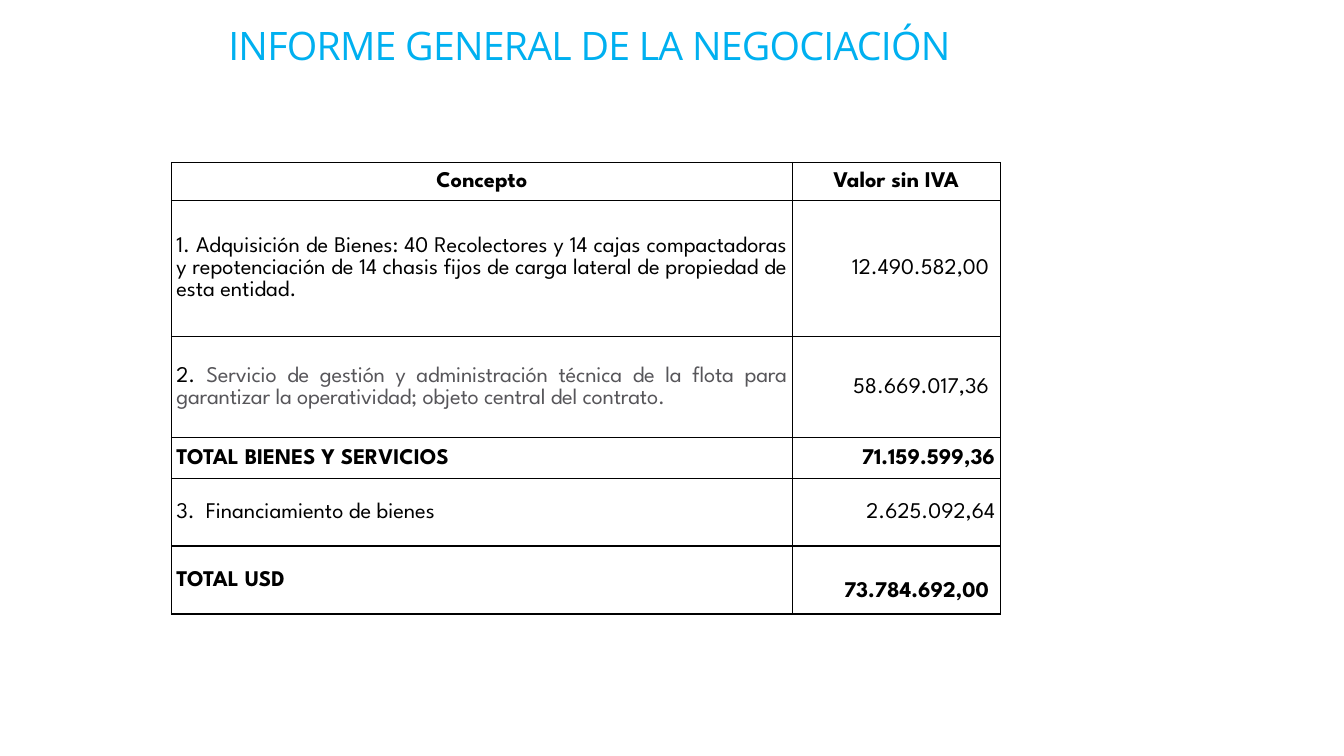
from lxml import etree
from pptx import Presentation
from pptx.dml.color import RGBColor
from pptx.enum.text import MSO_ANCHOR as Anchor, MSO_AUTO_SIZE as AutoSize, PP_ALIGN as Align
from pptx.oxml.ns import qn
from pptx.util import Pt

BLUE = RGBColor(0x00, 0xB0, 0xF0)
BLACK = RGBColor(0x00, 0x00, 0x00)
GRAY = RGBColor(0x57, 0x56, 0x5A)

TITLE = "INFORME GENERAL DE LA NEGOCIACIÓN"
HEADER = ("Concepto", "Valor sin IVA")
GOODS = ("1. Adquisición de Bienes: 40 Recolectores y 14 cajas compactadoras y repotenciación "
         "de 14 chasis fijos de carga lateral de propiedad de esta entidad.")
SERVICE = ("Servicio de gestión y administración técnica de la flota para garantizar "
           "la operatividad; objeto central del contrato.")

INSET, VALUE_INSET, LOWERED = 3.6, 8, 16
ROWS = [
    {"height": 27, "concept": [(HEADER[0], BLACK, 0)], "value": HEADER[1], "bold": True},
    {"height": 97.2, "concept": [(GOODS, BLACK, 0)], "value": "12.490.582,00", "right": VALUE_INSET},
    {"height": 72.6, "concept": [("2. ", BLACK, 0), (SERVICE, GRAY, -0.1)],
     "value": "58.669.017,36", "right": VALUE_INSET},
    {"height": 28.8, "concept": [("TOTAL BIENES Y SERVICIOS", BLACK, 0)],
     "value": "71.159.599,36", "bold": True},
    {"height": 48.5, "concept": [("3.  Financiamiento de bienes", BLACK, 0)], "value": "2.625.092,64"},
    {"height": 48.5, "concept": [("TOTAL USD", BLACK, 0)], "value": "73.784.692,00",
     "bold": True, "right": VALUE_INSET, "top": LOWERED},
]
COLUMN_WIDTHS = (443.6, 148.4)
TABLE_LEFT, TABLE_TOP = 122.4, 116


def apply(target, values):
    for name, value in values.items():
        setattr(target, name, value)


def write_paragraph(paragraph, runs, alignment, line_spacing, font_values):
    apply(paragraph, {"alignment": alignment, "line_spacing": line_spacing})
    for text, color, spacing in runs:
        run = paragraph.add_run()
        run.text = text
        apply(run.font, font_values)
        run.font.color.rgb = color
        if spacing:
            run._r.get_or_add_rPr().set("spc", str(round(spacing * 100)))


def add_borders(cell):
    properties = cell._tc.get_or_add_tcPr()
    for index, side in enumerate(("lnL", "lnR", "lnT", "lnB")):
        line = etree.Element(qn("a:" + side), w=str(Pt(1)))
        fill = etree.SubElement(line, qn("a:solidFill"))
        etree.SubElement(fill, qn("a:srgbClr"), val=str(BLACK))
        properties.insert(index, line)


def add_title(slide):
    title = slide.shapes.title
    apply(title, {"left": Pt(13), "top": Pt(2.9), "width": Pt(815.8), "height": Pt(64)})
    apply(title.text_frame, {
        "word_wrap": True, "auto_size": AutoSize.NONE, "vertical_anchor": Anchor.MIDDLE,
        "margin_left": 0, "margin_right": 0, "margin_top": 0, "margin_bottom": 0})
    write_paragraph(title.text_frame.paragraphs[0], [(TITLE, BLUE, -0.5)], Align.CENTER, 0.86,
                    {"name": "Open Sans", "size": Pt(28)})


def add_cost_table(slide):
    height = sum(row["height"] for row in ROWS)
    table = slide.shapes.add_table(
        len(ROWS), len(COLUMN_WIDTHS), Pt(TABLE_LEFT), Pt(TABLE_TOP),
        Pt(sum(COLUMN_WIDTHS)), Pt(height)).table
    apply(table, {"first_row": False, "horz_banding": False})
    for column, width in zip(table.columns, COLUMN_WIDTHS):
        column.width = Pt(width)
    for index, row in enumerate(ROWS):
        table.rows[index].height = Pt(row["height"])
        alignments = (Align.JUSTIFY, Align.RIGHT) if index else (Align.CENTER, Align.CENTER)
        contents = (row["concept"], [(row["value"], BLACK, 0)])
        margins = ((INSET, 0), (row.get("right", INSET), row.get("top", 0)))
        font_values = {"name": "League Spartan", "size": Pt(16), "bold": row.get("bold", False)}
        for column, (runs, alignment, (right, top)) in enumerate(zip(contents, alignments, margins)):
            cell = table.cell(index, column)
            apply(cell, {"vertical_anchor": Anchor.MIDDLE, "margin_left": Pt(INSET),
                         "margin_right": Pt(right), "margin_top": Pt(top), "margin_bottom": 0})
            cell.fill.background()
            add_borders(cell)
            write_paragraph(cell.text_frame.paragraphs[0], runs, alignment, 1.07, font_values)


def main():
    presentation = Presentation()
    apply(presentation, {"slide_width": Pt(960), "slide_height": Pt(540)})
    slide = presentation.slides.add_slide(presentation.slide_layouts[5])
    add_title(slide)
    add_cost_table(slide)
    presentation.save("out.pptx")


if __name__ == "__main__":
    main()
